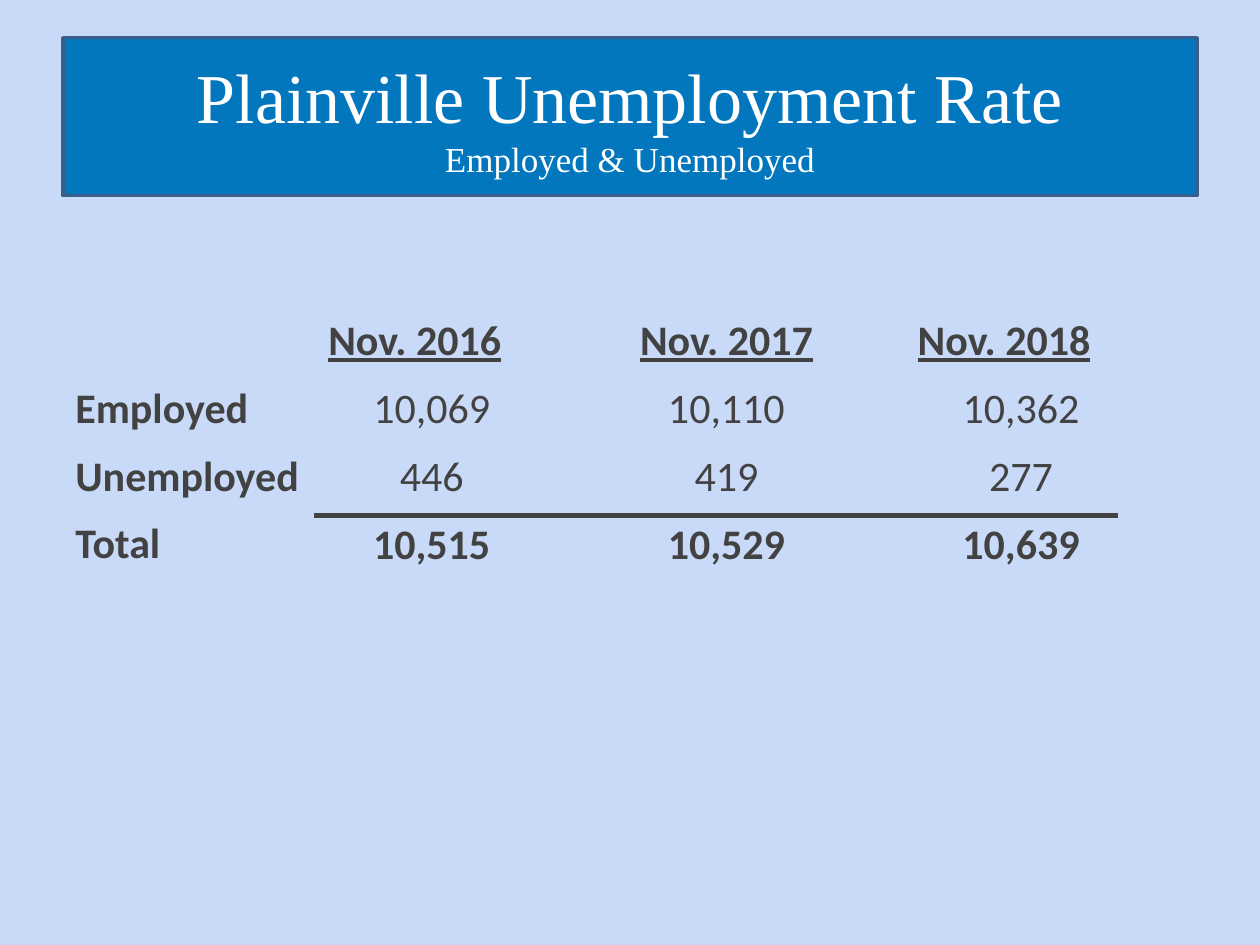
"""Build the Plainville unemployment rate slide."""
from lxml import etree
from pptx import Presentation
from pptx.dml.color import RGBColor
from pptx.enum.shapes import MSO_CONNECTOR, MSO_SHAPE
from pptx.enum.text import MSO_ANCHOR, PP_ALIGN as Align
from pptx.oxml.ns import qn
from pptx.util import Cm, Pt

COLORS = {"background": "C9DAF8", "banner": "0277BD", "border": "395E89",
          "title": "FFFFFF", "text": "424242"}
TITLE = [("Plainville Unemployment Rate", 40), ("Employed & Unemployed", 20)]
LABELS = ["Employed", "Unemployed", "Total"]
YEARS = [
    ("Nov. 2016", Align.LEFT, ["10,069", "446", "10,515"]),
    ("Nov. 2017", Align.CENTER, ["10,110", "419", "10,529"]),
    ("Nov. 2018", Align.LEFT, ["10,362", "277", "10,639"]),
]
TOP, ROW = 6.05, 1.36
FIRST_YEAR, YEAR_WIDTH, LABEL_WIDTH = 5.1, 5.94, 7.54


def color(name):
    return RGBColor.from_string(COLORS[name])


def add_run(paragraph, text, size, font, shade, bold=False, underline=False):
    run = paragraph.add_run()
    run.text = text
    run.font.size, run.font.name = Pt(size), font
    run.font.color.rgb = color(shade)
    run.font.bold, run.font.underline = bold, underline


def add_column(slide, left, top, width, entries):
    column = slide.shapes.add_textbox(Cm(left), Cm(top), Cm(width), Cm(ROW * len(entries)))
    frame = column.text_frame
    frame.word_wrap = True
    for index, (text, align, bold, underline) in enumerate(entries):
        row = frame.add_paragraph() if index else frame.paragraphs[0]
        row.alignment, row.line_spacing = align, 1.15
        if index:
            row.space_before = Pt(5.6)
        indents = row._p.get_or_add_pPr()
        indents.set("marL", str(Cm(2.06)))
        indents.set("indent", str(Cm(-0.79)))
        add_run(row, text, 24, "Calibri", "text", bold, underline)


def main():
    deck = Presentation()
    deck.slide_width, deck.slide_height = Cm(25.4), Cm(19.05)
    slide = deck.slides.add_slide(deck.slide_layouts[6])
    slide.background.fill.solid()
    slide.background.fill.fore_color.rgb = color("background")

    banner = slide.shapes.add_shape(MSO_SHAPE.RECTANGLE, Cm(1.27), Cm(0.76), Cm(22.86), Cm(3.18))
    banner.shadow.inherit = False
    banner.fill.solid()
    banner.fill.fore_color.rgb = color("banner")
    banner.line.color.rgb = color("border")
    banner.line.width = Pt(2)
    banner.text_frame.word_wrap = True
    banner.text_frame.vertical_anchor = MSO_ANCHOR.MIDDLE
    heading = banner.text_frame.paragraphs[0]
    heading.alignment = Align.CENTER
    for index, (text, size) in enumerate(TITLE):
        if index:
            heading.add_line_break()
        add_run(heading, text, size, "Times New Roman", "title")

    for index, (year, align, counts) in enumerate(YEARS):
        entries = [(year, align, True, True)]
        entries += [(count, Align.CENTER, count == counts[-1], False) for count in counts]
        add_column(slide, FIRST_YEAR + index * YEAR_WIDTH, TOP, YEAR_WIDTH, entries)
    add_column(slide, 0, TOP + ROW, LABEL_WIDTH,
               [(label, Align.LEFT, True, False) for label in LABELS])

    total_rule = slide.shapes.add_connector(
        MSO_CONNECTOR.STRAIGHT, Cm(6.32), Cm(10.39), Cm(22.53), Cm(10.39))
    total_rule.line.color.rgb = color("text")
    total_rule.line.width = Pt(3)
    etree.SubElement(total_rule._element.spPr, qn("a:effectLst"))

    deck.save("out.pptx")


if __name__ == "__main__":
    main()
